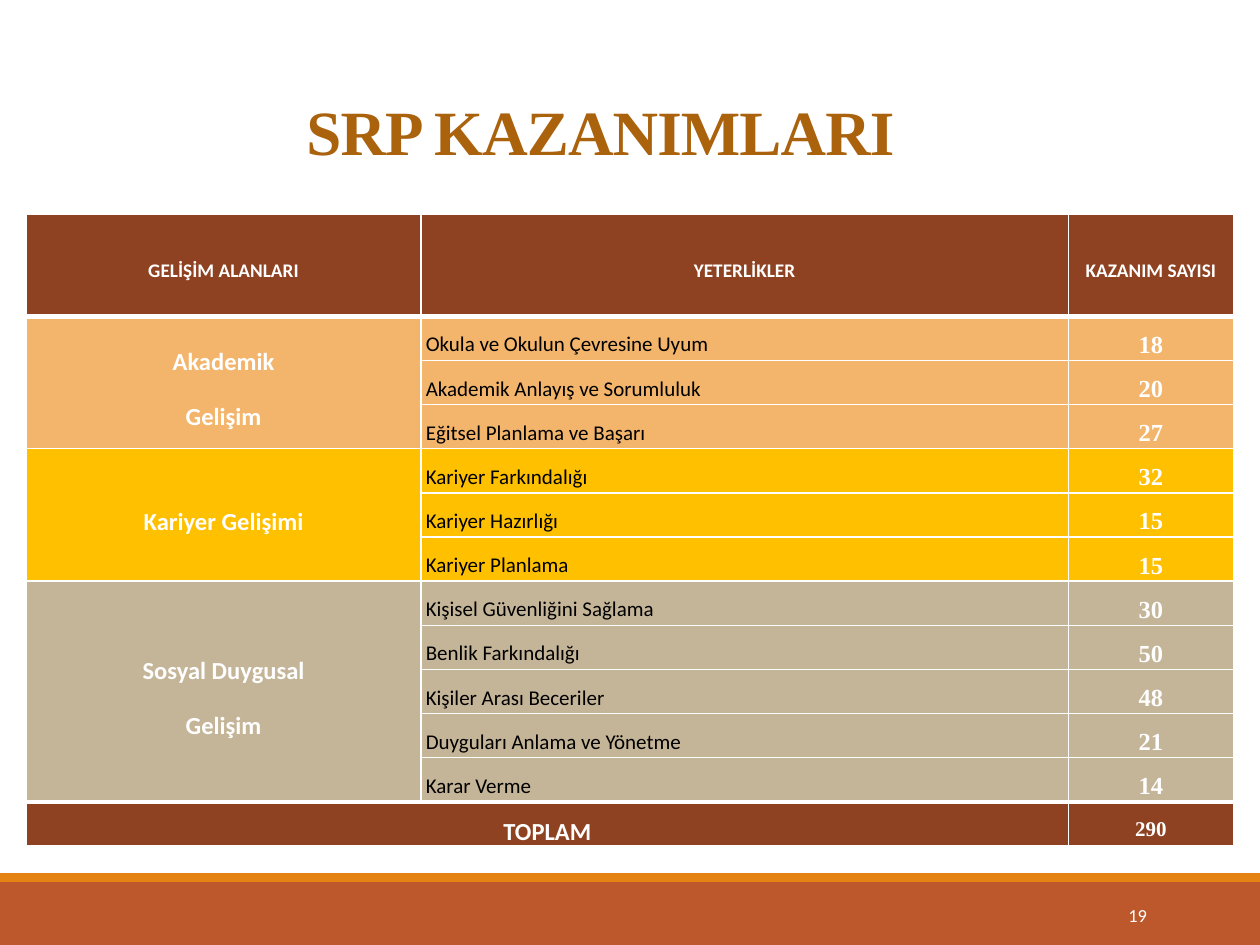
from dataclasses import dataclass

from lxml.etree import SubElement
from pptx import Presentation
from pptx.dml.color import RGBColor
from pptx.enum.shapes import MSO_SHAPE
from pptx.enum.text import MSO_ANCHOR, PP_ALIGN
from pptx.oxml.ns import qn
from pptx.util import Inches, Pt


@dataclass(frozen=True)
class Theme:
    """Colours, fonts and type sizes of the slide."""
    white: str = "FFFFFF"
    black: str = "000000"
    title: str = "AB620D"
    head: str = "8E4221"
    band: str = "BD582C"
    strip: str = "E48312"
    peach: str = "F3B56C"
    gold: str = "FFC000"
    sand: str = "C5B598"
    sans: str = "Calibri"
    serif: str = "Times New Roman"
    big: float = 36
    area: float = 14
    item: float = 12
    label: float = 11
    small: float = 10.5


T = Theme()
HEADS = ["GELİŞİM ALANLARI", "YETERLİKLER", "KAZANIM SAYISI"]
AREAS = [
    ("Akademik\nGelişim", T.peach, [
        ("Okula ve Okulun Çevresine Uyum", 18),
        ("Akademik Anlayış ve Sorumluluk", 20),
        ("Eğitsel Planlama ve Başarı", 27)]),
    ("Kariyer Gelişimi", T.gold, [
        ("Kariyer Farkındalığı", 32),
        ("Kariyer Hazırlığı", 15),
        ("Kariyer Planlama", 15)]),
    ("Sosyal Duygusal\nGelişim", T.sand, [
        ("Kişisel Güvenliğini Sağlama", 30),
        ("Benlik Farkındalığı", 50),
        ("Kişiler Arası Beceriler", 48),
        ("Duyguları Anlama ve Yönetme", 21),
        ("Karar Verme", 14)]),
]


def write(frame, text, size=T.area, font=T.sans, color=T.white, bold=True,
          align=PP_ALIGN.CENTER, line=1.5, before=6, after=0, track=None):
    """Fill a text frame with one formatted paragraph per line of text."""
    for i, part in enumerate(text.split("\n")):
        para = frame.add_paragraph() if i else frame.paragraphs[0]
        para.alignment, para.line_spacing = align, line
        para.space_before, para.space_after = Pt(before), Pt(after)
        run = para.add_run()
        run.text = part
        run.font.size, run.font.name, run.font.bold = Pt(size), font, bold
        run.font.color.rgb = RGBColor.from_string(color)
        if track is not None:
            run.font._element.set("spc", str(int(track * 100)))


def edge(cell, **widths):
    """Draw white cell borders, 1 point wide unless a side is named."""
    props = cell._tc.get_or_add_tcPr()
    for side in "LRTB":
        line = SubElement(props, qn(f"a:ln{side}"), w=str(Pt(widths.get(side, 1))))
        fill = SubElement(line, qn("a:solidFill"))
        SubElement(fill, qn("a:srgbClr"), val=T.white)


def dress(cell, color, **widths):
    """Give a cell its borders, fill, margins and anchor."""
    edge(cell, **widths)
    cell.fill.solid()
    cell.fill.fore_color.rgb = RGBColor.from_string(color)
    cell.margin_left = cell.margin_right = Inches(0.04)
    cell.margin_top = cell.margin_bottom = 0
    cell.vertical_anchor = MSO_ANCHOR.MIDDLE


def bar(slide, color, left, top, width, height):
    """Draw a plain filled bar."""
    shape = slide.shapes.add_shape(MSO_SHAPE.RECTANGLE, left, top, width, height)
    shape.shadow.inherit = False
    shape.fill.solid()
    shape.fill.fore_color.rgb = RGBColor.from_string(color)
    shape.line.fill.background()


def footer(slide, left, top, width, height):
    """Place the footer bars and the page number."""
    strip = Inches(0.07)
    bar(slide, T.band, left, top + strip, width, height - strip)
    bar(slide, T.strip, left, top, width, strip)
    box = slide.shapes.add_textbox(left + Inches(8.12), top + Inches(0.13),
                                   Inches(1.08), Inches(0.4))
    frame = box.text_frame
    frame.word_wrap = True
    frame.vertical_anchor = MSO_ANCHOR.MIDDLE
    write(frame, "19", size=T.small, bold=False, align=PP_ALIGN.RIGHT,
          line=1, before=0)


def title(slide, left, top, width, height):
    """Place the slide title."""
    shape = slide.shapes.title
    shape.left, shape.top, shape.width, shape.height = left, top, width, height
    shape.text_frame.vertical_anchor = MSO_ANCHOR.BOTTOM
    write(shape.text_frame, "SRP KAZANIMLARI", size=T.big, font=T.serif,
          color=T.title, line=0.85, before=0, track=-0.5)


def grid(slide, left, top, width, height):
    """Place the table of areas, skills and counts."""
    items = [(color, *item) for _, color, group in AREAS for item in group]
    last = len(items) + 1
    table = slide.shapes.add_table(last + 1, 3, left, top, width, height).table
    table.horz_banding = False
    table.last_row = True
    for col, size in zip(table.columns, (3.13, 5.14, 1.31)):
        col.width = Inches(size)
    first = Inches(0.81)
    for i, row in enumerate(table.rows):
        row.height = (height - first) // last if i else first

    for col, text in enumerate(HEADS):
        dress(table.cell(0, col), T.head, B=3)
        write(table.cell(0, col).text_frame, text, size=T.label)

    for row, (color, name, count) in enumerate(items, 1):
        ends = {"T": 3 if row == 1 else 1, "B": 3 if row == last - 1 else 1}
        for col in range(3):
            dress(table.cell(row, col), color, **ends)
        write(table.cell(row, 1).text_frame, name, size=T.item, color=T.black,
              bold=False, align=PP_ALIGN.LEFT, before=3, after=3)
        write(table.cell(row, 2).text_frame, str(count), font=T.serif)

    row = 1
    for name, _, group in AREAS:
        cell = table.cell(row, 0)
        row += len(group)
        cell.merge(table.cell(row - 1, 0))
        write(cell.text_frame, name)

    for col in range(3):
        dress(table.cell(last, col), T.head, T=3)
    total = table.cell(last, 0)
    total.merge(table.cell(last, 1))
    total.vertical_anchor = MSO_ANCHOR.TOP
    write(total.text_frame, "TOPLAM")
    whole = sum(count for _, _, count in items)
    write(table.cell(last, 2).text_frame, str(whole), size=T.item, font=T.serif)


def main():
    """Build and save the slide."""
    deck = Presentation()
    deck.slide_width, deck.slide_height = Inches(10), Inches(7.5)
    slide = deck.slides.add_slide(deck.slide_layouts[5])
    footer(slide, 0, Inches(6.93), Inches(10), Inches(0.57))
    title(slide, Inches(0.59), Inches(0.13), Inches(8.35), Inches(1.26))
    grid(slide, Inches(0.21), Inches(1.7), Inches(9.58), Inches(4.86))
    deck.save("out.pptx")


if __name__ == "__main__":
    main()
